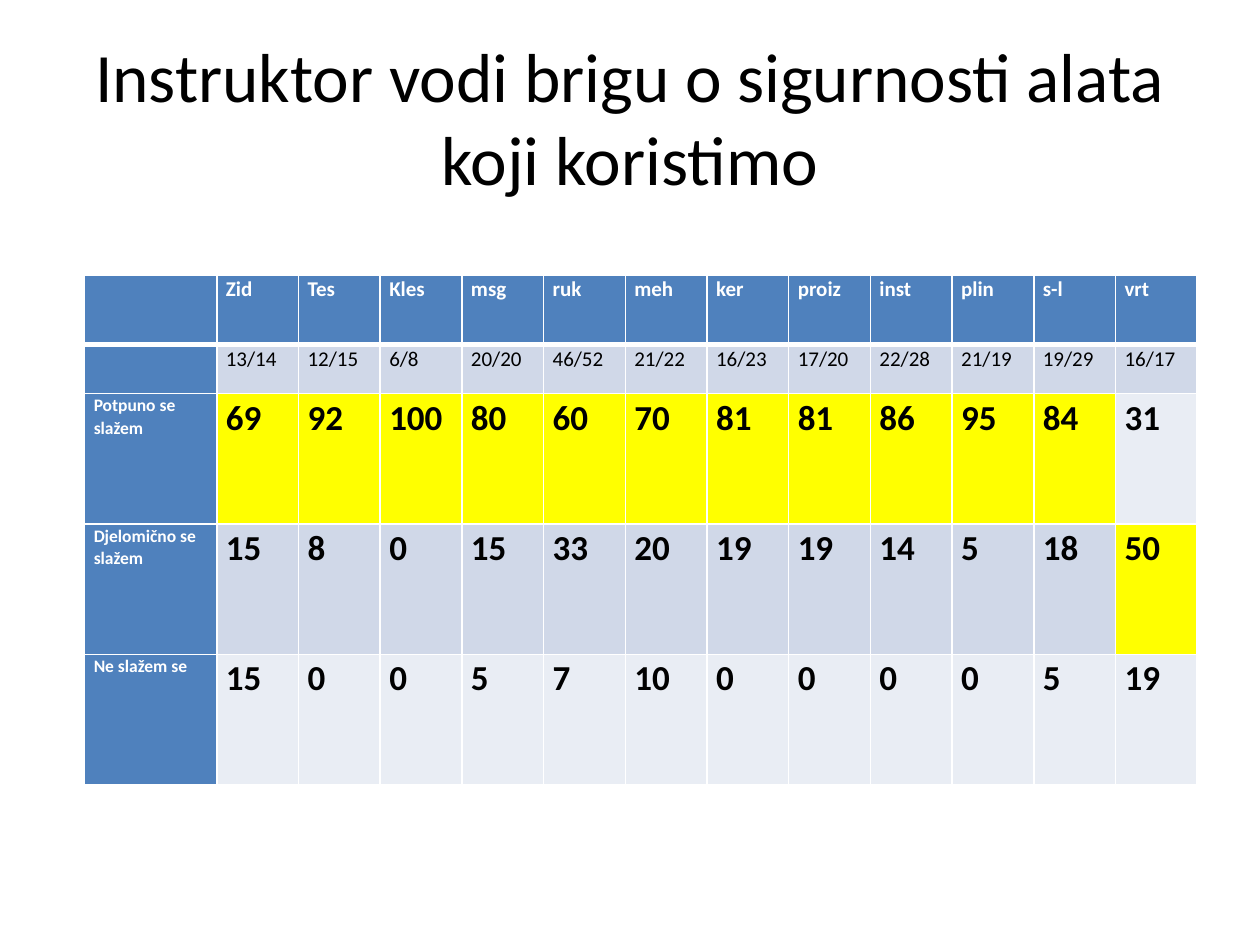
from lxml.etree import SubElement
from pptx import Presentation
from pptx.dml.color import RGBColor
from pptx.enum.text import MSO_ANCHOR, PP_ALIGN
from pptx.oxml.ns import qn
from pptx.util import Pt

COLORS = {
    "black": "000000",
    "white": "FFFFFF",
    "blue": "4F81BD",
    "dark band": "D0D8E8",
    "light band": "E9EDF4",
    "highlight": "FFFF00",
}
ROWS = [
    ["", "Zid", "Tes", "Kles", "msg", "ruk", "meh", "ker", "proiz", "inst", "plin", "s-l", "vrt"],
    ["", "13/14", "12/15", "6/8", "20/20", "46/52", "21/22", "16/23", "17/20", "22/28", "21/19", "19/29", "16/17"],
    ["Potpuno se slažem", "69", "92", "100", "80", "60", "70", "81", "81", "86", "95", "84", "31"],
    ["Djelomično se slažem", "15", "8", "0", "15", "33", "20", "19", "19", "14", "5", "18", "50"],
    ["Ne slažem se", "15", "0", "0", "5", "7", "10", "0", "0", "0", "0", "5", "19"],
]
ROW_HEIGHTS = [40, 28, 74.5, 74.5, 74.5]
COLUMN_WIDTHS = [75.5] + [46.7] * 12


def add_span(para, text, size, color, bold=False):
    span = para.add_run()
    span.text = text
    span.font.name = "Calibri"
    span.font.size = Pt(size)
    span.font.bold = bold
    span.font.color.rgb = RGBColor.from_string(COLORS[color])


def add_border(cell, side, width):
    line = SubElement(cell._tc.get_or_add_tcPr(), qn(f"a:ln{side}"), w=str(Pt(width)))
    fill = SubElement(line, qn("a:solidFill"))
    SubElement(fill, qn("a:srgbClr"), val=COLORS["white"])


deck = Presentation()
deck.slide_width = Pt(720)
deck.slide_height = Pt(540)
page = deck.slides.add_slide(deck.slide_layouts[5])

title = page.shapes.title
title.left, title.top, title.width, title.height = Pt(36), Pt(21.6), Pt(648), Pt(90)
title.text_frame.word_wrap = True
title.text_frame.vertical_anchor = MSO_ANCHOR.MIDDLE
para = title.text_frame.paragraphs[0]
para.alignment = PP_ALIGN.CENTER
add_span(para, "Instruktor vodi brigu o sigurnosti alata koji koristimo", 39.6, "black")

table = page.shapes.add_table(
    len(ROWS), len(COLUMN_WIDTHS), Pt(48.4), Pt(157), Pt(sum(COLUMN_WIDTHS)), Pt(sum(ROW_HEIGHTS))
).table
table.first_col = True
for column, width in zip(table.columns, COLUMN_WIDTHS):
    column.width = Pt(width)
for row, height in zip(table.rows, ROW_HEIGHTS):
    row.height = Pt(height)

for row_index, row in enumerate(ROWS):
    top_score = max(map(int, ROWS[2][1:])) if row_index == 2 else None
    for column_index, text in enumerate(row):
        cell = table.cell(row_index, column_index)
        is_label = row_index == 0 or column_index == 0
        is_score = row_index >= 2
        scores = [int(line[column_index]) for line in ROWS[2:]] if not is_label else []
        if is_label:
            fill = "blue"
        elif is_score and int(text) == max(scores):
            fill = "highlight"
        else:
            fill = "dark band" if row_index % 2 else "light band"

        cell.margin_left = cell.margin_right = Pt(5.2)
        cell.margin_top = cell.margin_bottom = Pt(0)
        for side in "LRTB":
            is_header_edge = (row_index, side) in [(0, "B"), (1, "T")]
            add_border(cell, side, 3 if is_header_edge else 1)
        cell.fill.solid()
        cell.fill.fore_color.rgb = RGBColor.from_string(COLORS[fill])

        if text:
            para = cell.text_frame.paragraphs[0]
            para.line_spacing = 1.07
            size = 12 if row_index < 2 else 10 if is_label else 20
            add_span(para, text, size, "white" if is_label else "black", is_label or is_score)

deck.save("out.pptx")
